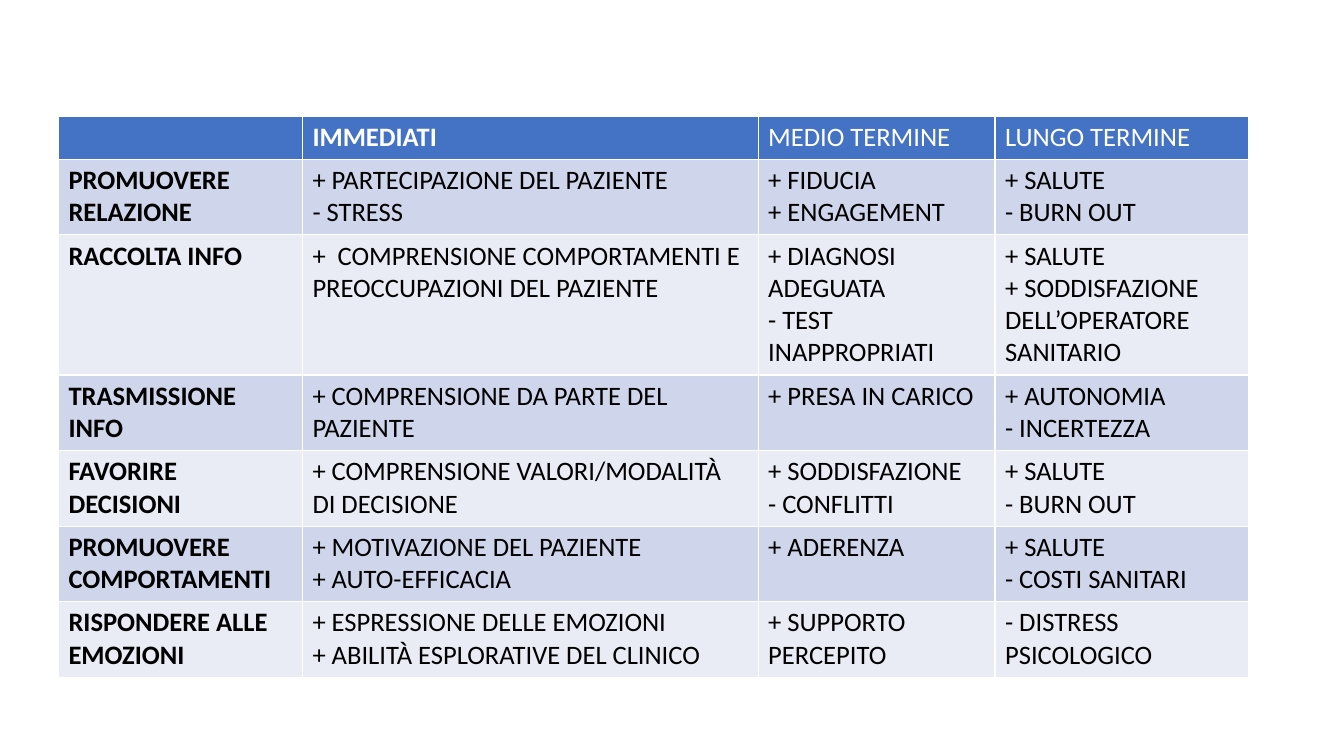
"""Build a slide with a table of communication goals and their outcomes over time."""
from pptx import Presentation
from pptx.dml.color import RGBColor
from pptx.util import Inches, Pt

COLUMN_WIDTHS = [2.42, 4.52, 2.35, 2.51]
ROW_HEIGHTS = [0.43, 0.75, 1.39, 0.75, 0.75, 0.75, 0.75]
HEADER_FILL = "4472C4"
BAND_FILLS = ["E9EBF5", "CFD5EA"]
ROWS = [
    ["", "IMMEDIATI", "MEDIO TERMINE", "LUNGO TERMINE"],
    ["PROMUOVERE RELAZIONE", "+ PARTECIPAZIONE DEL PAZIENTE\n- STRESS",
     "+ FIDUCIA\n+ ENGAGEMENT", "+ SALUTE\n- BURN OUT"],
    ["RACCOLTA INFO", "+  COMPRENSIONE COMPORTAMENTI E PREOCCUPAZIONI DEL PAZIENTE",
     "+ DIAGNOSI ADEGUATA\n- TEST INAPPROPRIATI",
     "+ SALUTE\n+ SODDISFAZIONE DELL’OPERATORE SANITARIO"],
    ["TRASMISSIONE\nINFO", "+ COMPRENSIONE DA PARTE DEL PAZIENTE",
     "+ PRESA IN CARICO", "+ AUTONOMIA\n- INCERTEZZA"],
    ["FAVORIRE\nDECISIONI", "+ COMPRENSIONE VALORI/MODALITÀ\nDI DECISIONE",
     "+ SODDISFAZIONE\n- CONFLITTI", "+ SALUTE\n- BURN OUT"],
    ["PROMUOVERE COMPORTAMENTI", "+ MOTIVAZIONE DEL PAZIENTE\n+ AUTO-EFFICACIA",
     "+ ADERENZA", "+ SALUTE\n- COSTI SANITARI"],
    ["RISPONDERE ALLE\nEMOZIONI",
     "+ ESPRESSIONE DELLE EMOZIONI\n+ ABILITÀ ESPLORATIVE DEL CLINICO",
     "+ SUPPORTO PERCEPITO", "- DISTRESS PSICOLOGICO"],
]
MARGINS = {"margin_left": Inches(0.1), "margin_right": Inches(0.1),
           "margin_top": Inches(0.05), "margin_bottom": Inches(0.05)}


def color(hex_string):
    return RGBColor.from_string(hex_string)


deck = Presentation()
deck.slide_width, deck.slide_height = Inches(13.33), Inches(7.5)
page = deck.slides.add_slide(deck.slide_layouts[6])

table = page.shapes.add_table(
    len(ROWS), len(COLUMN_WIDTHS), Inches(0.58), Inches(1.15),
    Inches(sum(COLUMN_WIDTHS)), Inches(sum(ROW_HEIGHTS))).table
for column, width in zip(table.columns, COLUMN_WIDTHS):
    column.width = Inches(width)
for row, height in zip(table.rows, ROW_HEIGHTS):
    row.height = Inches(height)

for row_index, texts in enumerate(ROWS):
    is_header = row_index == 0
    for column_index, text in enumerate(texts):
        cell = table.cell(row_index, column_index)
        cell.text = text
        cell.fill.solid()
        cell.fill.fore_color.rgb = color(HEADER_FILL if is_header else BAND_FILLS[row_index % 2])
        for name, value in MARGINS.items():
            setattr(cell, name, value)
        is_bold = column_index == (1 if is_header else 0)
        font_format = {"name": "Calibri", "size": Pt(19), "bold": is_bold}
        for para in cell.text_frame.paragraphs:
            for span in para.runs:
                for name, value in font_format.items():
                    setattr(span.font, name, value)
                span.font.color.rgb = color("FFFFFF" if is_header else "000000")

deck.save("out.pptx")
